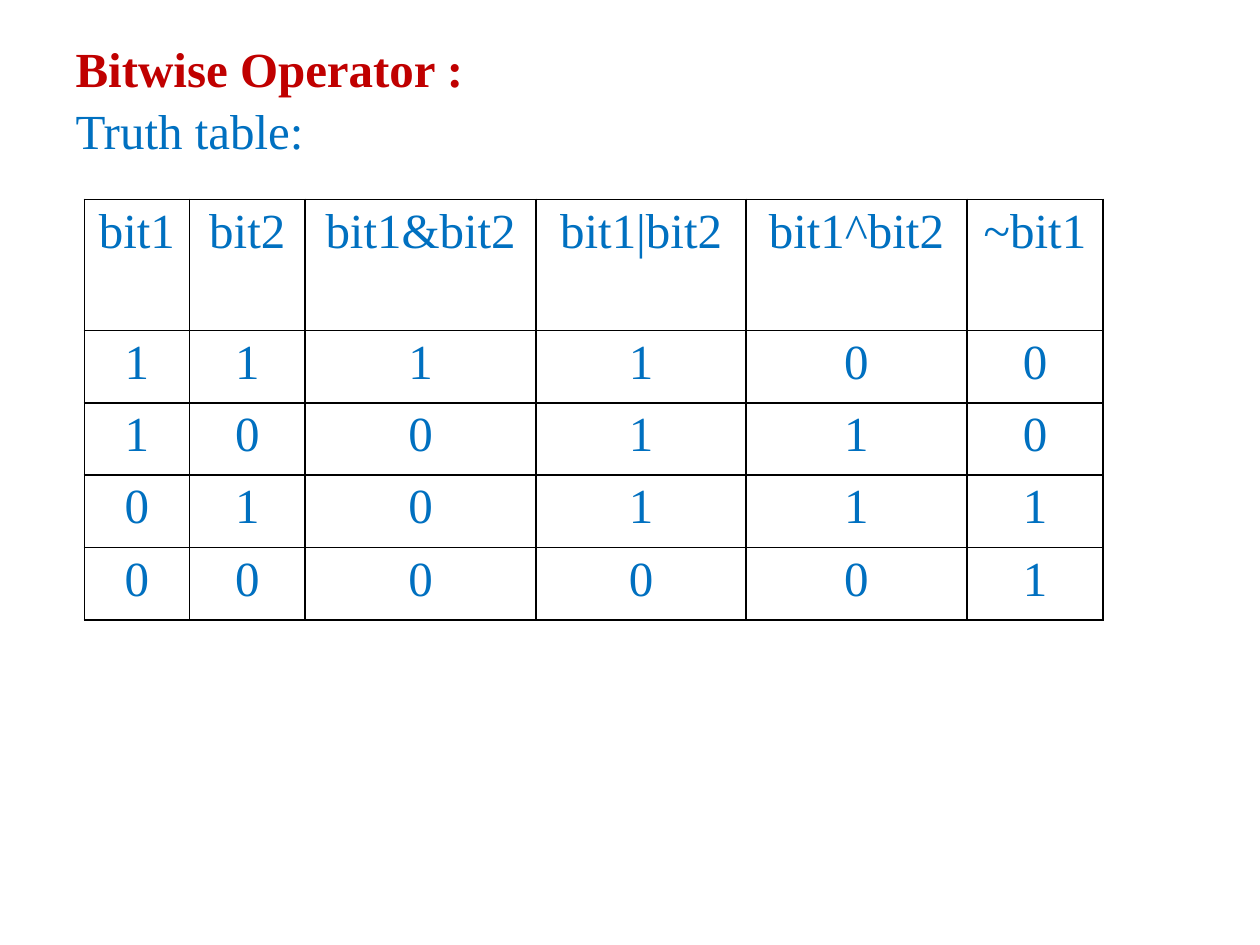
from lxml import etree
from pptx import Presentation
from pptx.dml.color import RGBColor
from pptx.enum.text import MSO_AUTO_SIZE, PP_ALIGN
from pptx.oxml.ns import qn
from pptx.util import Cm, Pt

CENTER = PP_ALIGN.CENTER
NO_AUTOFIT = MSO_AUTO_SIZE.NONE

RED = RGBColor(0xC0, 0x00, 0x00)
BLUE = RGBColor(0x00, 0x70, 0xC0)
BLACK = RGBColor(0x00, 0x00, 0x00)

FONT = {"name": "Times New Roman", "size": Pt(28), "bold": False}

LINES = [("Bitwise Operator :", RED, True), ("Truth table:", BLUE, False)]

COLUMN_WIDTHS = [2.12, 2.33, 4.66, 4.23, 4.45, 2.75]
HEADER_HEIGHT, ROW_HEIGHT = 2.64, 1.46
HEADER = ["bit1", "bit2", "bit1&bit2", "bit1|bit2", "bit1^bit2", "~bit1"]
INPUTS = [(1, 1), (1, 0), (0, 1), (0, 0)]


def add_run(p, text, color, **changes):
    r = p.add_run()
    r.text = text
    for name, value in {**FONT, **changes}.items():
        setattr(r.font, name, value)
    r.font.color.rgb = color


def set_borders(cell, color, width):
    tcPr = cell._tc.get_or_add_tcPr()
    for position, side in enumerate(("lnL", "lnR", "lnT", "lnB")):
        ln = etree.Element(qn(f"a:{side}"), w=str(width))
        fill = etree.SubElement(ln, qn("a:solidFill"))
        etree.SubElement(fill, qn("a:srgbClr"), val=str(color))
        tcPr.insert(position, ln)


def fill_heading(body, left, top, width, height):
    box = {"left": left, "top": top, "width": width, "height": height}
    for name, value in box.items():
        setattr(body, name, Cm(value))
    tf = body.text_frame
    tf.auto_size = NO_AUTOFIT
    for i, (text, color, bold) in enumerate(LINES):
        p = tf.add_paragraph() if i else tf.paragraphs[0]
        p.space_before = Pt(2)
        # Plain line without bullet or indent
        pPr = p._p.get_or_add_pPr()
        pPr.set("marL", "0")
        pPr.set("indent", "0")
        etree.SubElement(pPr, qn("a:buNone"))
        add_run(p, text, color, bold=bold)


def add_truth_table(slide, left, top):
    rows = [HEADER] + [[a, b, a & b, a | b, a ^ b, 1 - a] for a, b in INPUTS]
    heights = [HEADER_HEIGHT] + [ROW_HEIGHT] * len(INPUTS)
    table = slide.shapes.add_table(
        len(rows), len(HEADER), Cm(left), Cm(top),
        Cm(sum(COLUMN_WIDTHS)), Cm(sum(heights))).table
    table.first_row = table.horz_banding = False
    for column, width in zip(table.columns, COLUMN_WIDTHS):
        column.width = Cm(width)
    for row, height, values in zip(table.rows, heights, rows):
        row.height = Cm(height)
        for cell, value in zip(row.cells, values):
            cell.fill.background()
            set_borders(cell, BLACK, Pt(1))
            cell.margin_top = cell.margin_bottom = Cm(0.1)
            p = cell.text_frame.paragraphs[0]
            p.alignment = CENTER
            add_run(p, str(value), BLUE)


def main():
    prs = Presentation()
    prs.slide_width, prs.slide_height = Cm(25.4), Cm(19.05)
    slide = prs.slides.add_slide(prs.slide_layouts[1])

    # The heading lines sit in the body, so the title is not needed
    title = slide.shapes.title
    title.element.getparent().remove(title.element)

    fill_heading(slide.placeholders[1], 1.27, 0.64, 22.86, 16.38)
    add_truth_table(slide, 1.7, 4.02)
    prs.save("out.pptx")


if __name__ == "__main__":
    main()
